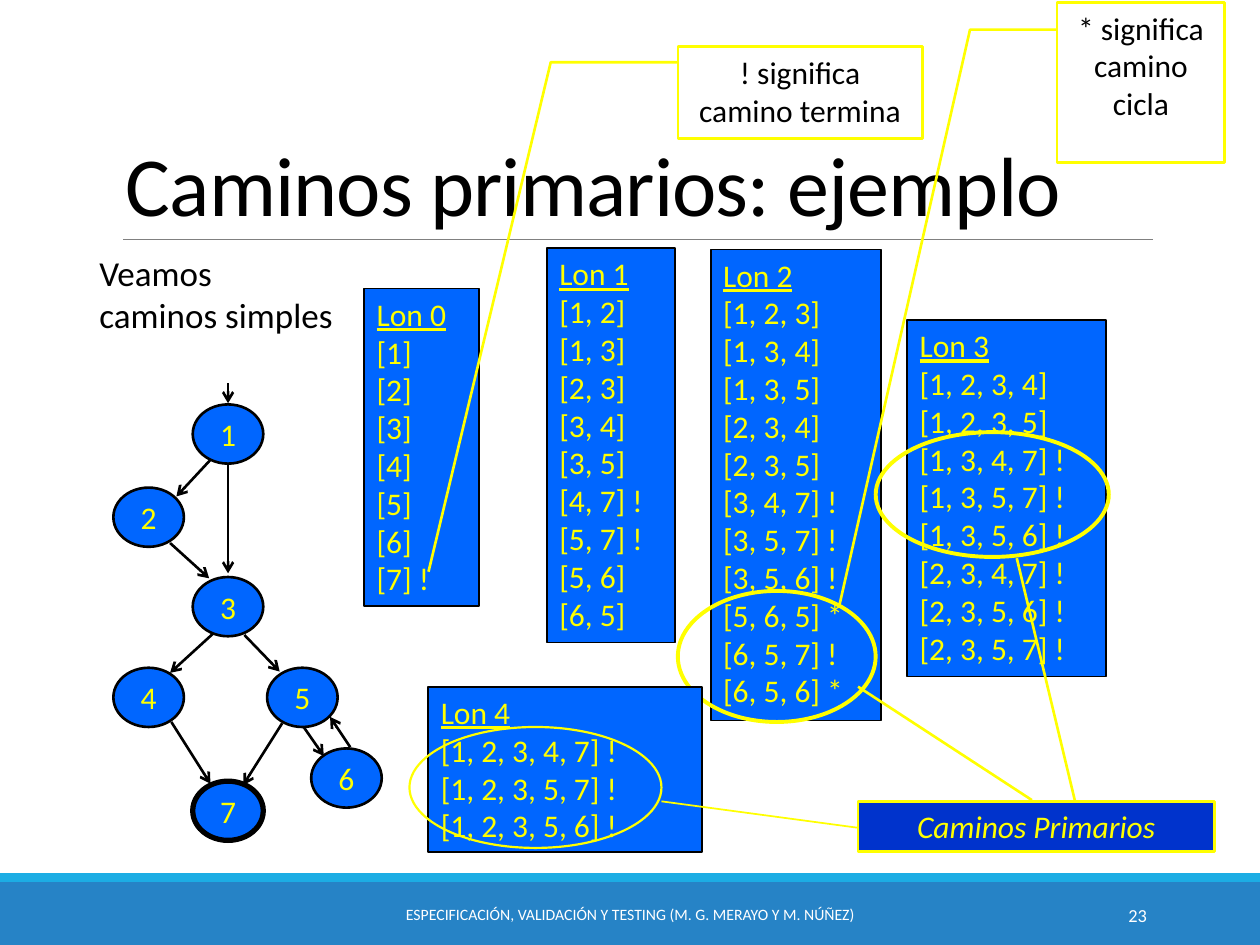
from dataclasses import dataclass

from lxml.etree import SubElement
from pptx import Presentation
from pptx.dml.color import RGBColor
from pptx.enum.shapes import MSO_CONNECTOR, MSO_SHAPE
from pptx.enum.text import MSO_ANCHOR, PP_ALIGN
from pptx.oxml.ns import qn
from pptx.util import Pt

SCALE = 9144  # EMU in one px, 100 px to the inch


@dataclass(frozen=True)
class Theme:
    font: str = "Calibri"
    black: str = "000000"
    white: str = "FFFFFF"
    gray: str = "808080"
    yellow: str = "FFFF00"
    blue: str = "0066FF"
    navy: str = "0033CC"
    band: str = "2683C6"
    strip: str = "1CADE4"
    title: float = 48
    lead: float = 20
    body: float = 18
    page: float = 10.5
    foot: float = 9


T = Theme()


def px(*sizes):
    return [size * SCALE for size in sizes]


def shift(box, left, top, *size):
    """Move a place inside a box onto the slide."""
    return (box[0] + left, box[1] + top, *size)


def paint(line, color, width):
    line.color.rgb = RGBColor.from_string(color)
    line.width = Pt(width)


def shape(host, kind, box, fill=None, line=None, width=1.5):
    item = host.add_shape(kind, *px(*box))
    item.shadow.inherit = False
    if fill:
        item.fill.solid()
        item.fill.fore_color.rgb = RGBColor.from_string(fill)
    else:
        item.fill.background()
    if line:
        paint(item.line, line, width)
    else:
        item.line.fill.background()
    return item


def link(host, start, end, color, width=1.5, arrow=False):
    item = host.add_connector(MSO_CONNECTOR.STRAIGHT, *px(*start, *end))
    paint(item.line, color, width)
    props = item._element.spPr
    if arrow:
        SubElement(props.find(qn("a:ln")), qn("a:tailEnd"), type="arrow")
    SubElement(props, qn("a:effectLst"))


def write(item, rows, size, color, align=PP_ALIGN.LEFT, anchor=MSO_ANCHOR.TOP):
    frame = item.text_frame
    frame.word_wrap = True
    frame.vertical_anchor = anchor
    frame.text = "\n".join(rows)
    for para in frame.paragraphs:
        para.alignment = align
        para.font.name = T.font
        para.font.size = Pt(size)
        para.font.color.rgb = RGBColor.from_string(color)
    return frame.paragraphs[0]


def label(host, box, text, *style):
    return write(host.add_textbox(*px(*box)), [text], *style)


def header(host, box, text):
    para = label(host, box, text, T.title, T.black, PP_ALIGN.LEFT, MSO_ANCHOR.BOTTOM)
    para.line_spacing = 0.85
    para.runs[0]._r.get_or_add_rPr().set("spc", "-50")
    base = box[3]
    link(host, shift(box, 8, base), shift(box, 825, base), T.gray, 0.5)


def footer(host, box, text, page):
    wide, high = box[2:]
    shape(host, MSO_SHAPE.RECTANGLE, shift(box, 0, 7, wide, high - 7), T.band)
    shape(host, MSO_SHAPE.RECTANGLE, shift(box, 0, 0, wide, 7), T.strip)
    mid = MSO_ANCHOR.MIDDLE
    label(host, shift(box, 302, 13, 396, 40), text, T.foot, T.white, PP_ALIGN.CENTER, mid)
    label(host, shift(box, 812, 13, 108, 40), page, T.page, T.white, PP_ALIGN.RIGHT, mid)


def graph(host, box):
    group = host.add_group_shape().shapes
    # Nodes
    nodes = {"1": (63, 17), "2": (0, 83), "3": (63, 154), "4": (0, 226),
             "5": (122, 226), "6": (157, 290), "7": (63, 316)}
    for name, spot in nodes.items():
        width = 3 if name == "7" else 1.5
        node = shape(group, MSO_SHAPE.OVAL, shift(box, *spot, 56, 47), T.blue, T.black, width)
        write(node, [name], T.body, T.yellow, PP_ALIGN.CENTER, MSO_ANCHOR.MIDDLE)
        frame = node.text_frame
        frame.margin_left = frame.margin_right = 0
        frame.margin_top = frame.margin_bottom = 0
    # Edges: entry, 1-2, 1-3, 2-3, 3-4, 3-5, 4-7, 5-7, 5-6, 6-5
    edges = [((91, 0), (91, 16)), ((77, 61), (50, 90)), ((91, 65), (91, 151)),
             ((45, 127), (76, 155)), ((79, 199), (45, 230)), ((104, 200), (132, 229)),
             ((46, 269), (77, 318)), ((134, 270), (103, 319)), ((151, 273), (167, 296)),
             ((188, 289), (172, 265))]
    for start, end in edges:
        link(group, shift(box, *start), shift(box, *end), T.black, arrow=True)


def paths(host, box, name, rows):
    item = shape(host, MSO_SHAPE.RECTANGLE, box, T.blue, T.black, 1)
    write(item, [name, *rows.split("; ")], T.body, T.yellow).font.underline = True


def callout(host, box, text, bend):
    item = shape(host, MSO_SHAPE.LINE_CALLOUT_2, box, T.white, T.yellow)
    for spot, value in enumerate((0.17, 0, 0.17, -0.52, *bend)):
        item.adjustments[spot] = value
    write(item, [text], T.body, T.black, PP_ALIGN.CENTER)


def primes(host, box):
    group = host.add_group_shape().shapes
    # Rings around the primary paths
    for ring in ((157, 0, 185, 99), (0, 126, 157, 104)):
        shape(group, MSO_SHAPE.OVAL, shift(box, *ring), None, T.yellow, 2.25)
    # Name plate and its links
    plate = shape(group, MSO_SHAPE.RECTANGLE, shift(box, 143, 293, 283, 40), T.navy, T.yellow)
    para = write(plate, ["Caminos Primarios"], T.body, T.yellow, PP_ALIGN.CENTER)
    para.font.italic = True
    for start, end in (((269, 100), (315, 292)), ((143, 202), (281, 292))):
        link(group, shift(box, *start), shift(box, *end), T.yellow)


def longest(host, box):
    paths(host, shift(box, 15, 0, 217, 131), "Lon 4",
          "[1, 2, 3, 4, 7] !; [1, 2, 3, 5, 7] !; [1, 2, 3, 5, 6] !")
    shape(host, MSO_SHAPE.OVAL, shift(box, 0, 32, 200, 96), None, T.yellow, 1.25)
    link(host, shift(box, 200, 91), shift(box, 356, 112), T.yellow, 1)


def main():
    deck = Presentation()
    deck.slide_width, deck.slide_height = px(1000, 750)
    host = deck.slides.add_slide(deck.slide_layouts[6]).shapes

    footer(host, (0, 693, 1000, 57),
           "ESPECIFICACIÓN, VALIDACIÓN Y TESTING (M. G. MERAYO Y M. NÚÑEZ)", "23")
    header(host, (90, 31, 875, 159), "Caminos primarios: ejemplo")
    graph(host, (90, 304))

    # Simple paths by length
    lists = [
        ((289, 229, 91, 252), "[1]; [2]; [3]; [4]; [5]; [6]; [7] !"),
        ((434, 197, 102, 313), "[1, 2]; [1, 3]; [2, 3]; [3, 4]; [3, 5]; "
                               "[4, 7] !; [5, 7] !; [5, 6]; [6, 5]"),
        ((564, 198, 135, 374), "[1, 2, 3]; [1, 3, 4]; [1, 3, 5]; [2, 3, 4]; "
                               "[2, 3, 5]; [3, 4, 7] !; [3, 5, 7] !; [3, 5, 6] !; "
                               "[5, 6, 5] *; [6, 5, 7] !; [6, 5, 6] *"),
        ((720, 254, 158, 283), "[1, 2, 3, 4]; [1, 2, 3, 5]; [1, 3, 4, 7] !; "
                               "[1, 3, 5, 7] !; [1, 3, 5, 6] !; [2, 3, 4, 7] !; "
                               "[2, 3, 5, 6] !; [2, 3, 5, 7] !"),
    ]
    for size, (box, rows) in enumerate(lists):
        paths(host, box, f"Lon {size}", rows)

    primes(host, (538, 343))
    longest(host, (325, 545))
    callout(host, (538, 37, 194, 73), "! significa camino termina", (5.71, -1.02))
    callout(host, (839, 2, 133, 127), "* significa camino cicla", (3.77, -1.3))
    label(host, (69, 195, 205, 111), "Veamos caminos simples", T.lead, T.black)
    deck.save("out.pptx")


if __name__ == "__main__":
    main()
